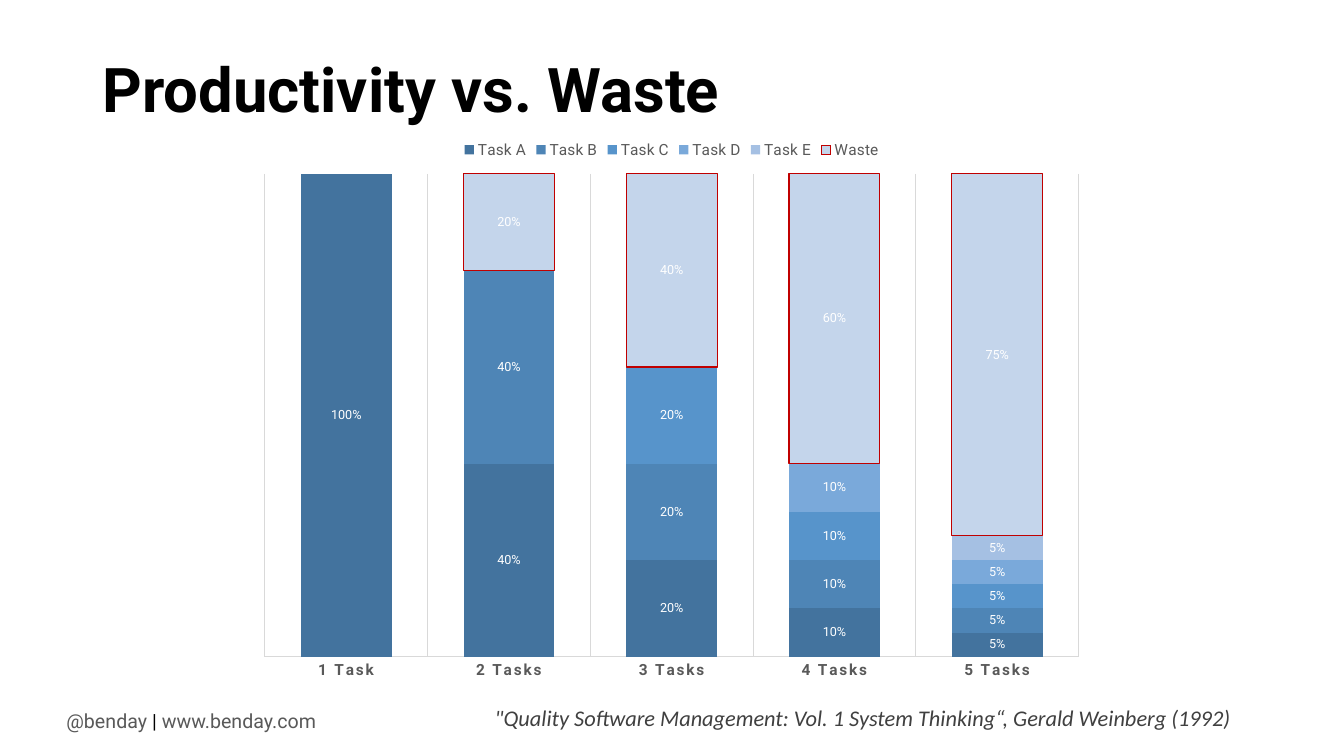
import pptx
import pptx.chart.data
import pptx.dml.color
import pptx.enum.chart
import pptx.enum.text
import pptx.oxml
import pptx.util
from pptx.oxml.ns import nsdecls

Pt = pptx.util.Pt
RGBColor = pptx.dml.color.RGBColor

TITLE = "Productivity vs. Waste"
CITATION = "\"Quality Software Management: Vol. 1 System Thinking“, Gerald Weinberg (1992)"
CATEGORIES = ["1 Task", "2 Tasks", "3 Tasks", "4 Tasks", "5 Tasks"]
SERIES = [
    ("Task A", (1, 0.4, 0.2, 0.1, 0.05), RGBColor(0x43, 0x73, 0x9E)),
    ("Task B", (0, 0.4, 0.2, 0.1, 0.05), RGBColor(0x4E, 0x85, 0xB6)),
    ("Task C", (0, 0, 0.2, 0.1, 0.05), RGBColor(0x57, 0x94, 0xCB)),
    ("Task D", (0, 0, 0, 0.1, 0.05), RGBColor(0x7A, 0xA9, 0xDA)),
    ("Task E", (0, 0, 0, 0, 0.05), RGBColor(0xA5, 0xC0, 0xE3)),
    ("Waste", (0, 0.2, 0.4, 0.6, 0.75), RGBColor(0xC4, 0xD5, 0xEB)),
]

BLACK = RGBColor(0, 0, 0)
WHITE = RGBColor(255, 255, 255)
GRAY = RGBColor(0x59, 0x59, 0x59)
DARK_GRAY = RGBColor(0x40, 0x40, 0x40)
GRID_GRAY = RGBColor(0xD9, 0xD9, 0xD9)
WASTE_RED = RGBColor(0xC0, 0, 0)

FOOTER = [("@benday", GRAY), (" | ", BLACK), ("www.benday.com", GRAY)]
PLOT_LAYOUT = {"x": 0.02, "y": 0.08, "w": 0.96, "h": 0.86}


def set_font(font, size, color, name="Roboto", bold=False, italic=False):
    font.name = name
    font.size = Pt(size)
    font.bold = bold
    font.italic = italic
    font.color.rgb = color


def set_line(line, color):
    line.color.rgb = color
    line.width = Pt(0.75)


def add_text(slide, runs, left, top, width, height, size, wrap=False,
             anchor=pptx.enum.text.MSO_ANCHOR.TOP, line_spacing=1, **style):
    """Add a one-paragraph text box from (text, color) runs."""
    box = slide.shapes.add_textbox(Pt(left), Pt(top), Pt(width), Pt(height))
    frame = box.text_frame
    frame.word_wrap = wrap
    frame.vertical_anchor = anchor
    paragraph = frame.paragraphs[0]
    paragraph.line_spacing = line_spacing
    for text, color in runs:
        run = paragraph.add_run()
        run.text = text
        set_font(run.font, size, color, **style)


def place_plot(chart):
    """Fix the inner plot area at fractions of the chart."""
    modes = "".join(f'<c:{key}Mode val="edge"/>' for key in "xy")
    sizes = "".join(f'<c:{key} val="{value}"/>' for key, value in PLOT_LAYOUT.items())
    layout = pptx.oxml.parse_xml(
        f'<c:layout {nsdecls("c")}><c:manualLayout><c:layoutTarget val="inner"/>'
        f"{modes}{sizes}</c:manualLayout></c:layout>")
    plot_area = chart.plots[0]._element.getparent()
    for old_layout in plot_area.findall(layout.tag):
        plot_area.remove(old_layout)
    plot_area.insert(0, layout)


def add_productivity_chart(slide):
    data = pptx.chart.data.CategoryChartData(number_format="0%")
    data.categories = CATEGORIES
    for name, values, _ in SERIES:
        data.add_series(name, values)
    chart = slide.shapes.add_chart(
        pptx.enum.chart.XL_CHART_TYPE.COLUMN_STACKED_100,
        Pt(177.12), Pt(92.16), Pt(605.52), Pt(401.04), data).chart
    chart.has_title = False
    set_font(chart.font, 10, BLACK)

    chart.has_legend = True
    chart.legend.position = pptx.enum.chart.XL_LEGEND_POSITION.TOP
    chart.legend.include_in_layout = False
    set_font(chart.legend.font, 11, GRAY)

    tasks_axis = chart.category_axis
    tasks_axis.major_tick_mark = pptx.enum.chart.XL_TICK_MARK.NONE
    tasks_axis.has_major_gridlines = True
    set_line(tasks_axis.major_gridlines.format.line, GRID_GRAY)
    set_line(tasks_axis.format.line, GRID_GRAY)
    tasks_font = tasks_axis.tick_labels.font
    set_font(tasks_font, 11, GRAY, bold=True)
    tasks_font._element.set("spc", "120")

    share_axis = chart.value_axis
    share_axis.has_major_gridlines = False
    share_axis.tick_labels.number_format = "0%"
    share_axis.tick_labels.number_format_is_linked = False
    share_axis.visible = False

    plot = chart.plots[0]
    plot.gap_width = 79
    plot.overlap = 100
    plot.vary_by_categories = False
    for series, (name, _, color) in zip(plot.series, SERIES):
        series.format.fill.solid()
        series.format.fill.fore_color.rgb = color
        if name == "Waste":
            set_line(series.format.line, WASTE_RED)
        labels = series.data_labels
        labels.show_value = True
        labels.number_format = "0%;;"  # zero shares show no label
        labels.number_format_is_linked = False
        labels.position = pptx.enum.chart.XL_LABEL_POSITION.CENTER
        set_font(labels.font, 9, WHITE)
    place_plot(chart)


def main():
    presentation = pptx.Presentation()
    presentation.slide_width = Pt(960)
    presentation.slide_height = Pt(540)
    slide = presentation.slides.add_slide(presentation.slide_layouts[6])
    add_text(slide, FOOTER, 40.32, 502.56, 193.68, 24.48, 14)
    add_text(slide, [(TITLE, BLACK)], 66.24, 28.8, 828, 74.88, 44, wrap=True,
             anchor=pptx.enum.text.MSO_ANCHOR.MIDDLE, line_spacing=0.9, bold=True)
    add_text(slide, [(CITATION, DARK_GRAY)], 346.32, 499.68, 547.2, 26.64, 16,
             name="Calibri", italic=True)
    add_productivity_chart(slide)
    presentation.save("out.pptx")


if __name__ == "__main__":
    main()
